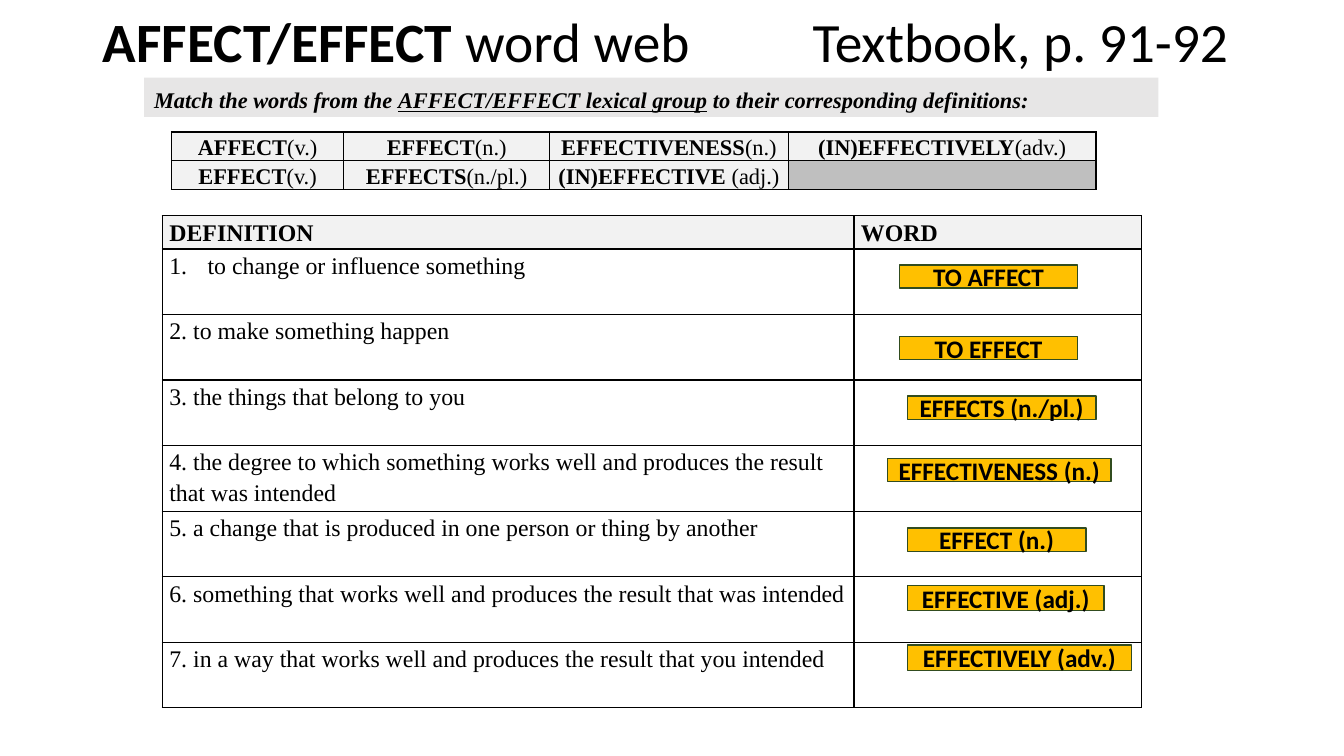
from dataclasses import dataclass

import pptx
import pptx.util
import pptx.dml.color
import pptx.enum.shapes
import pptx.enum.text
import pptx.oxml.ns
import pptx.oxml.xmlchemy

Inches = pptx.util.Inches
Pt = pptx.util.Pt
RGBColor = pptx.dml.color.RGBColor
Align = pptx.enum.text.PP_ALIGN
Anchor = pptx.enum.text.MSO_ANCHOR

BLACK = RGBColor(0x00, 0x00, 0x00)
PALE = RGBColor(0xF2, 0xF2, 0xF2)
GREY = RGBColor(0xBF, 0xBF, 0xBF)
BANNER = RGBColor(0xE7, 0xE6, 0xE6)
GOLD = RGBColor(0xFF, 0xC0, 0x00)
GREEN = RGBColor(0x31, 0x4C, 0x1F)
SERIF = "Times New Roman"
SANS = "Calibri"


@dataclass
class Answer:
    text: str
    left: float
    top: float
    width: float
    height: float = 0.23


@dataclass
class Grid:
    left: float
    top: float
    cols: list[float]
    rows: list[float]


WORDS = [
    [("AFFECT", "(v.)"), ("EFFECT", "(n.)"), ("EFFECTIVENESS", "(n.)"), ("(IN)EFFECTIVELY", "(adv.)")],
    [("EFFECT", "(v.)"), ("EFFECTS", "(n./pl.)"), ("(IN)EFFECTIVE ", "(adj.)"), None],
]
DEFINITIONS = [
    "to change or influence something",
    "2. to make something happen",
    "3. the things that belong to you",
    "4. the degree to which something works well and produces the result that was intended",
    "5. a change that is produced in one person or thing by another",
    "6. something that works well and produces the result that was intended",
    "7. in a way that works well and produces the result that you intended",
]
ANSWERS = [
    Answer("TO AFFECT", 8.92, 2.63, 1.77),
    Answer("TO EFFECT", 8.92, 3.34, 1.77),
    Answer("EFFECTS (n./pl.)", 9, 3.93, 1.87),
    Answer("EFFECTIVENESS (n.)", 8.8, 4.55, 2.22),
    Answer("EFFECT (n.)", 9, 5.24, 1.77),
    Answer("EFFECTIVE (adj.)", 9, 5.81, 1.95, 0.25),
    Answer("EFFECTIVELY (adv.)", 9, 6.4, 2.22, 0.25),
]


def set_all(target, values: dict) -> None:
    for name, value in values.items():
        setattr(target, name, value)


def add_run(p, text: str, name: str, size: float, **extra) -> None:
    r = p.add_run()
    r.text = text
    set_all(r.font, {"name": name, "size": Pt(size), **extra})
    r.font.color.rgb = BLACK


def add_xml(parent, tag: str, **attrs: str):
    child = pptx.oxml.xmlchemy.OxmlElement(tag)
    for key, value in attrs.items():
        child.set(key, value)
    parent.append(child)
    return child


def add_box(s, left: float, top: float, width: float, height: float, fill: RGBColor):
    sp = s.shapes.add_shape(pptx.enum.shapes.MSO_SHAPE.RECTANGLE,
                            Inches(left), Inches(top), Inches(width), Inches(height))
    sp.shadow.inherit = False
    sp.fill.solid()
    sp.fill.fore_color.rgb = fill
    return sp


def format_cell(cell, size: float) -> None:
    set_all(cell, {"margin_left": Inches(0.07), "margin_right": Inches(0.07),
                   "margin_top": 0, "margin_bottom": 0})
    for side in ("a:lnL", "a:lnR", "a:lnT", "a:lnB"):
        ln = add_xml(cell._tc.get_or_add_tcPr(), side, w=str(Pt(1)))
        add_xml(add_xml(ln, "a:solidFill"), "a:srgbClr", val=str(BLACK))
    cell.fill.background()
    p = cell.text_frame.paragraphs[0]
    p.line_spacing = 1.15
    add_xml(p._p, "a:endParaRPr", sz=str(int(size * 100)))


def add_grid(s, grid: Grid, size: float):
    frame = s.shapes.add_table(len(grid.rows), len(grid.cols), Inches(grid.left), Inches(grid.top),
                               Inches(sum(grid.cols)), Inches(sum(grid.rows)))
    table = frame.table
    set_all(table, {"first_row": False, "horz_banding": False})
    for col, width in zip(table.columns, grid.cols):
        col.width = Inches(width)
    for row, height in zip(table.rows, grid.rows):
        row.height = Inches(height)
    for cell in table.iter_cells():
        format_cell(cell, size)
    return table


def shade(cell, color: RGBColor) -> None:
    cell.fill.solid()
    cell.fill.fore_color.rgb = color


def add_title(s) -> None:
    sp = s.shapes.title
    set_all(sp, {"left": Inches(0.92), "top": Inches(0.17),
                 "width": Inches(11.5), "height": Inches(0.55)})
    sp.text_frame.vertical_anchor = Anchor.MIDDLE
    p = sp.text_frame.paragraphs[0]
    set_all(p, {"alignment": Align.LEFT, "line_spacing": 0.9})
    tabs = add_xml(p._p.get_or_add_pPr(), "a:tabLst")
    add_xml(tabs, "a:tab", pos=str(Inches(7.04)), algn="l")
    add_run(p, "AFFECT/EFFECT ", SANS, 39.6, bold=True)
    add_run(p, "word web\tTextbook, p. 91-92", SANS, 39.6, bold=False)


def add_word_bank(s) -> None:
    table = add_grid(s, Grid(1.7, 1.31, [1.71, 2.04, 2.37, 3.05], [0.28] * 2), 16)
    for i, row in enumerate(WORDS):
        for j, word in enumerate(row):
            cell = table.cell(i, j)
            shade(cell, PALE if word else GREY)
            cell.vertical_anchor = Anchor.MIDDLE
            p = cell.text_frame.paragraphs[0]
            p.alignment = Align.CENTER
            if word:
                add_run(p, word[0], SERIF, 16, bold=True)
                add_run(p, word[1], SERIF, 16, bold=False)


def add_banner(s) -> None:
    sp = add_box(s, 1.43, 0.77, 10.06, 0.39, BANNER)
    sp.line.fill.background()
    set_all(sp.text_frame, {"word_wrap": True, "vertical_anchor": Anchor.TOP,
                            "auto_size": pptx.enum.text.MSO_AUTO_SIZE.SHAPE_TO_FIT_TEXT})
    p = sp.text_frame.paragraphs[0]
    set_all(p, {"alignment": Align.LEFT, "line_spacing": 1.15})
    for text, underline in (("Match the words from the ", False),
                            ("AFFECT/EFFECT lexical group", True),
                            (" to their corresponding definitions:", False)):
        add_run(p, text, SERIF, 16, bold=True, italic=True, underline=underline)


def add_definitions(s) -> None:
    table = add_grid(s, Grid(1.61, 2.14, [6.86, 2.85], [0.33] + [0.65] * len(DEFINITIONS)), 17)
    for j, heading in enumerate(("DEFINITION", "WORD")):
        shade(table.cell(0, j), PALE)
        add_run(table.cell(0, j).text_frame.paragraphs[0], heading, SERIF, 17, bold=True)
    for i, text in enumerate(DEFINITIONS, 1):
        p = table.cell(i, 0).text_frame.paragraphs[0]
        add_run(p, text, SERIF, 17, bold=False)
    # The first definition is numbered automatically
    pPr = table.cell(1, 0).text_frame.paragraphs[0]._p.get_or_add_pPr()
    pPr.set("marL", str(Inches(0.38)))
    pPr.set("indent", str(Inches(-0.38)))
    add_xml(pPr, "a:buFont", typeface="+mj-lt")
    add_xml(pPr, "a:buAutoNum", type="arabicPeriod")


def add_answer(s, answer: Answer) -> None:
    sp = add_box(s, answer.left, answer.top, answer.width, answer.height, GOLD)
    sp.line.color.rgb = GREEN
    sp.line.width = Pt(1)
    set_all(sp.text_frame, {"word_wrap": True, "vertical_anchor": Anchor.MIDDLE})
    p = sp.text_frame.paragraphs[0]
    p.alignment = Align.CENTER
    add_run(p, answer.text, SANS, 18, bold=True)


def main() -> None:
    prs = pptx.Presentation()
    set_all(prs, {"slide_width": Inches(13.33), "slide_height": Inches(7.5)})
    s = prs.slides.add_slide(prs.slide_layouts[5])
    # Heading, word bank and instruction
    add_title(s)
    add_word_bank(s)
    add_banner(s)
    # Definitions with their answers
    add_definitions(s)
    for answer in ANSWERS:
        add_answer(s, answer)
    prs.save("out.pptx")


if __name__ == "__main__":
    main()
